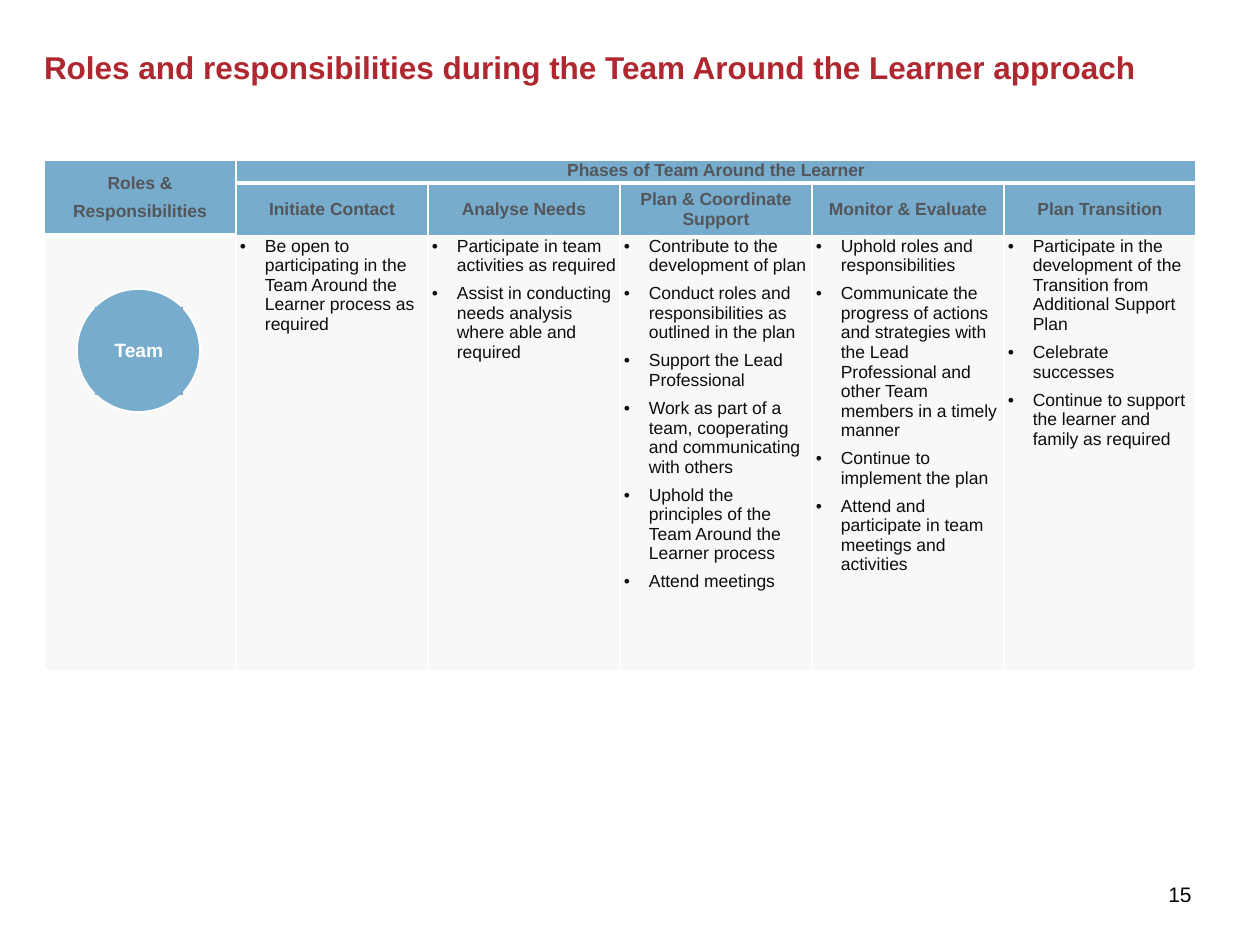
import dataclasses

import lxml.etree
import pptx
import pptx.dml.color
import pptx.enum.shapes
import pptx.enum.text
import pptx.oxml.ns
import pptx.util

ALIGN = pptx.enum.text.PP_ALIGN
ANCHOR = pptx.enum.text.MSO_ANCHOR
SHAPE = pptx.enum.shapes.MSO_SHAPE


def px(length):
    return pptx.util.Emu(round(length * 914400 / 126))


def rgb(value):
    return pptx.dml.color.RGBColor.from_string(value)


def add_element(parent, tag, **attributes):
    return lxml.etree.SubElement(parent, pptx.oxml.ns.qn(tag), attributes)


@dataclasses.dataclass(frozen=True)
class Theme:
    font: str = "Arial"
    red: str = "AF272F"
    blue: str = "77ACCD"
    pale: str = "F8F8F7"
    gray: str = "53565A"
    ink: str = "0D0D0D"
    black: str = "000000"
    white: str = "FFFFFF"
    title_size: int = 18
    number_size: int = 12
    label_size: int = 11
    table_size: int = 10
    paragraph_gap: float = 2.4
    thin: int = 1
    thick: int = 3


class SlideBuilder:
    def __init__(self, slide, theme):
        self.slide = slide
        self.theme = theme

    def style(self, paragraph, size, color, bold, align=ALIGN.LEFT):
        paragraph.alignment = align
        font = paragraph.font
        font.name = self.theme.font
        font.size = pptx.util.Pt(size)
        font.bold = bold
        font.color.rgb = rgb(color)

    def text(self, box, text, size, color, bold=False, align=ALIGN.LEFT,
             anchor=ANCHOR.TOP):
        shape = self.slide.shapes.add_textbox(*map(px, box))
        self.fill_text(shape, text, size, color, bold, align, anchor)

    def fill_text(self, shape, text, size, color, bold, align, anchor):
        frame = shape.text_frame
        frame.word_wrap = True
        frame.vertical_anchor = anchor
        frame.margin_left = frame.margin_right = 0
        frame.margin_top = frame.margin_bottom = 0
        paragraph = frame.paragraphs[0]
        paragraph.text = text
        paragraph.line_spacing = 0.9
        self.style(paragraph, size, color, bold, align)

    def shape(self, kind, box, fill, line=None):
        shape = self.slide.shapes.add_shape(kind, *map(px, box))
        shape.shadow.inherit = False
        shape.fill.solid()
        shape.fill.fore_color.rgb = rgb(fill)
        if line:
            shape.line.color.rgb = rgb(line)
            shape.line.width = pptx.util.Pt(self.theme.thin)
        else:
            shape.line.fill.background()
        return shape

    def badge(self, circle, label_box, text):
        self.shape(SHAPE.OVAL, circle, self.theme.blue, self.theme.white)
        label = self.shape(SHAPE.RECTANGLE, label_box, self.theme.blue)
        self.fill_text(label, text, self.theme.label_size, self.theme.white,
                       True, ALIGN.CENTER, ANCHOR.MIDDLE)

    def table(self, left, top, column_width, row_heights, columns):
        frame = self.slide.shapes.add_table(
            len(row_heights), columns, px(left), px(top),
            px(column_width * columns), px(sum(row_heights)))
        table = frame.table
        for column in table.columns:
            column.width = px(column_width)
        for row, height in zip(table.rows, row_heights):
            row.height = px(height)
        return table

    def borders(self, cell, bottom):
        properties = cell._tc.get_or_add_tcPr()
        widths = {"a:lnL": self.theme.thin, "a:lnR": self.theme.thin,
                  "a:lnT": self.theme.thin, "a:lnB": bottom}
        for tag, width in widths.items():
            line = add_element(properties, tag, w=str(pptx.util.Pt(width)))
            fill = add_element(line, "a:solidFill")
            add_element(fill, "a:srgbClr", val=self.theme.white)

    def cell(self, cell, lines, header, bottom, anchor):
        theme = self.theme
        self.borders(cell, bottom)
        cell.fill.solid()
        cell.fill.fore_color.rgb = rgb(theme.blue if header else theme.pale)
        cell.margin_left = cell.margin_right = px(4)
        cell.margin_top = cell.margin_bottom = px(1)
        cell.vertical_anchor = anchor
        cell.text = "\n".join(lines)
        for index, paragraph in enumerate(cell.text_frame.paragraphs):
            if index:
                paragraph.space_before = pptx.util.Pt(theme.paragraph_gap)
            if index < len(lines) - 1:
                paragraph.space_after = pptx.util.Pt(theme.paragraph_gap)
            if header:
                self.style(paragraph, theme.table_size, theme.gray, True,
                           ALIGN.CENTER)
            else:
                if lines:
                    self.bullet(paragraph)
                self.style(paragraph, theme.table_size, theme.ink, False)

    def bullet(self, paragraph):
        properties = paragraph._p.get_or_add_pPr()
        properties.set("marL", str(px(25)))
        properties.set("indent", str(-px(25)))
        add_element(properties, "a:buFont", typeface=self.theme.font)
        add_element(properties, "a:buChar", char="•")


PHASES = {
    "Initiate Contact": [
        "Be open to participating in the Team Around the Learner process as required",
    ],
    "Analyse Needs": [
        "Participate in team activities as required",
        "Assist in conducting needs analysis where able and required",
    ],
    "Plan & Coordinate Support": [
        "Contribute to the development of plan",
        "Conduct roles and responsibilities as outlined in the plan",
        "Support the Lead Professional",
        "Work as part of a team, cooperating and communicating with others",
        "Uphold the principles of the Team Around the Learner process",
        "Attend meetings",
    ],
    "Monitor & Evaluate": [
        "Uphold roles and responsibilities",
        "Communicate the progress of actions and strategies with the Lead "
        "Professional and other Team members in a timely manner",
        "Continue to implement the plan",
        "Attend and participate in team meetings and activities",
    ],
    "Plan Transition": [
        "Participate in the development of the Transition from Additional Support Plan",
        "Celebrate successes",
        "Continue to support the learner and family as required",
    ],
}


def main():
    theme = Theme()
    presentation = pptx.Presentation()
    presentation.slide_width = px(1260)
    presentation.slide_height = px(945)
    slide = presentation.slides.add_slide(presentation.slide_layouts[6])
    builder = SlideBuilder(slide, theme)

    builder.text((1150, 871, 60, 50), "15", theme.number_size, theme.black,
                 align=ALIGN.CENTER, anchor=ANCHOR.MIDDLE)
    builder.text((44, 52, 1166, 108),
                 "Roles and responsibilities during the Team Around the Learner approach",
                 theme.title_size, theme.red, bold=True)

    rows = [
        [["Roles &", "Responsibilities"], ["Phases of Team Around the Learner"],
         [], [], [], []],
        [[], *([phase] for phase in PHASES)],
        [[], *PHASES.values()],
    ]
    table = builder.table(44, 160, 192, (23, 51, 435), len(PHASES) + 1)
    table.cell(0, 0).merge(table.cell(1, 0))
    table.cell(0, 1).merge(table.cell(0, len(PHASES)))
    for row, contents in enumerate(rows):
        for column, lines in enumerate(contents):
            thick = row == 0 or (row == 1 and column == 0)
            middle = row == 1 or (row == 0 and column == 0)
            builder.cell(table.cell(row, column), lines, header=row < 2,
                         bottom=theme.thick if thick else theme.thin,
                         anchor=ANCHOR.MIDDLE if middle else ANCHOR.TOP)

    builder.badge((77, 289, 123, 123), (95, 307, 88, 88), "Team")
    presentation.save("out.pptx")


if __name__ == "__main__":
    main()
